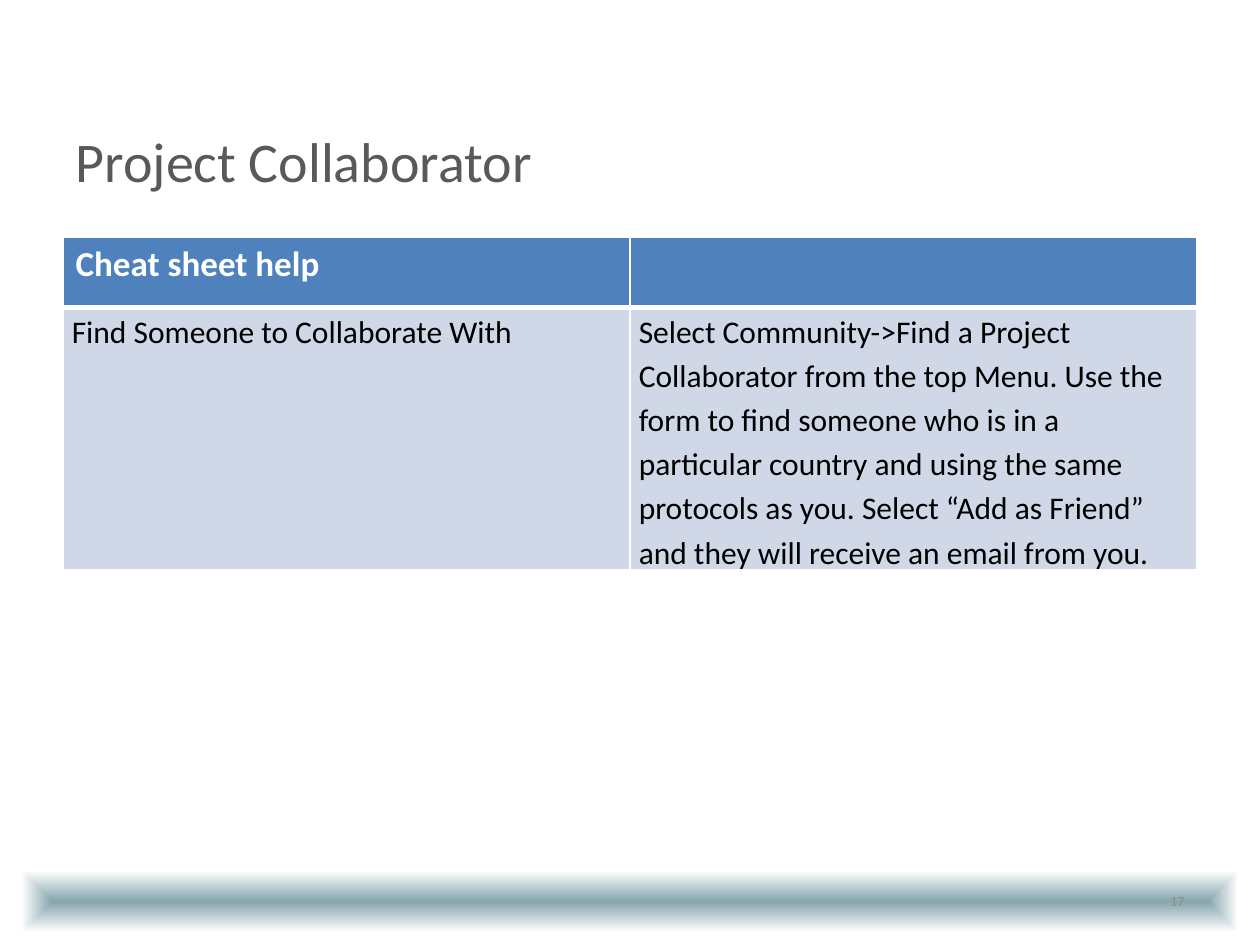
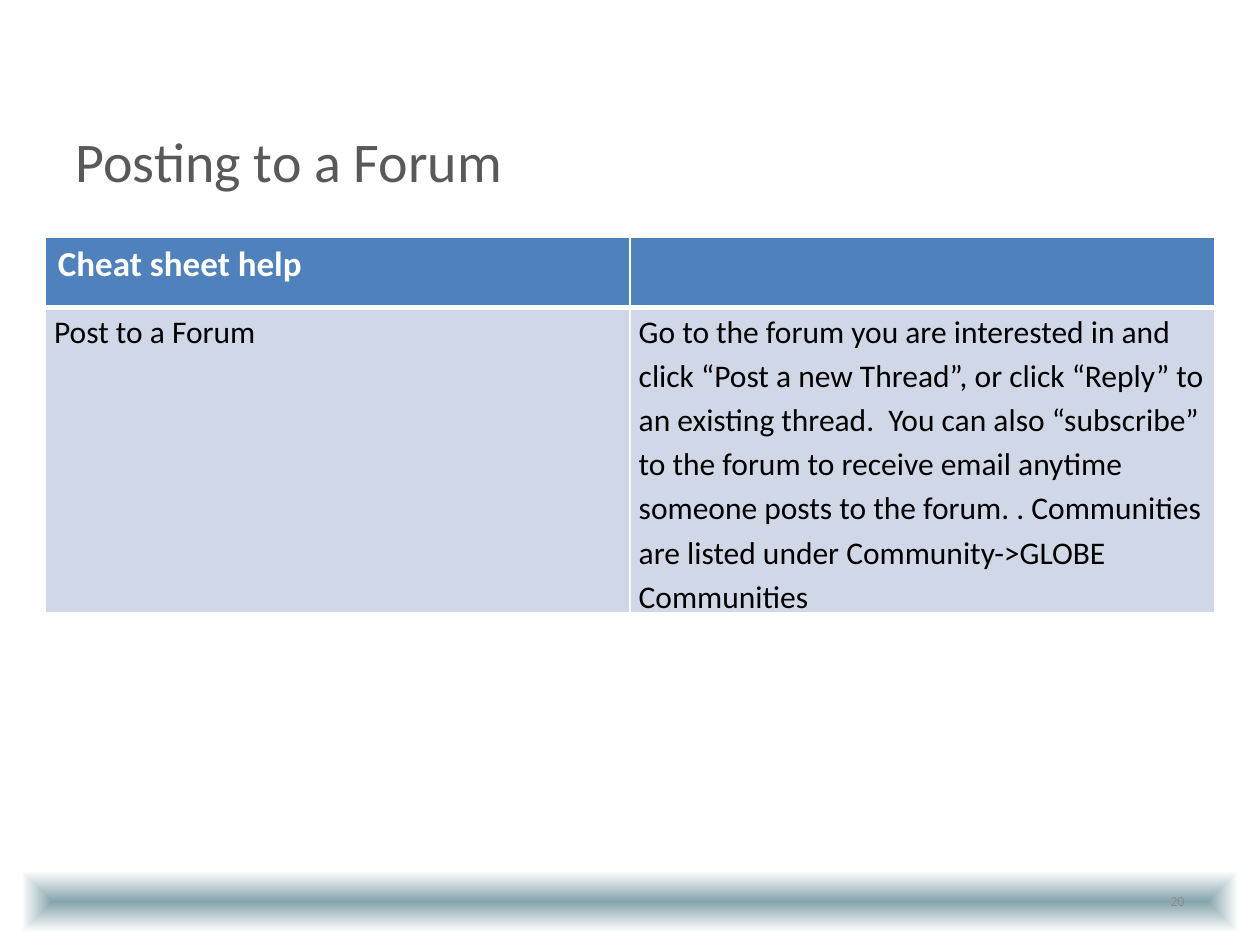
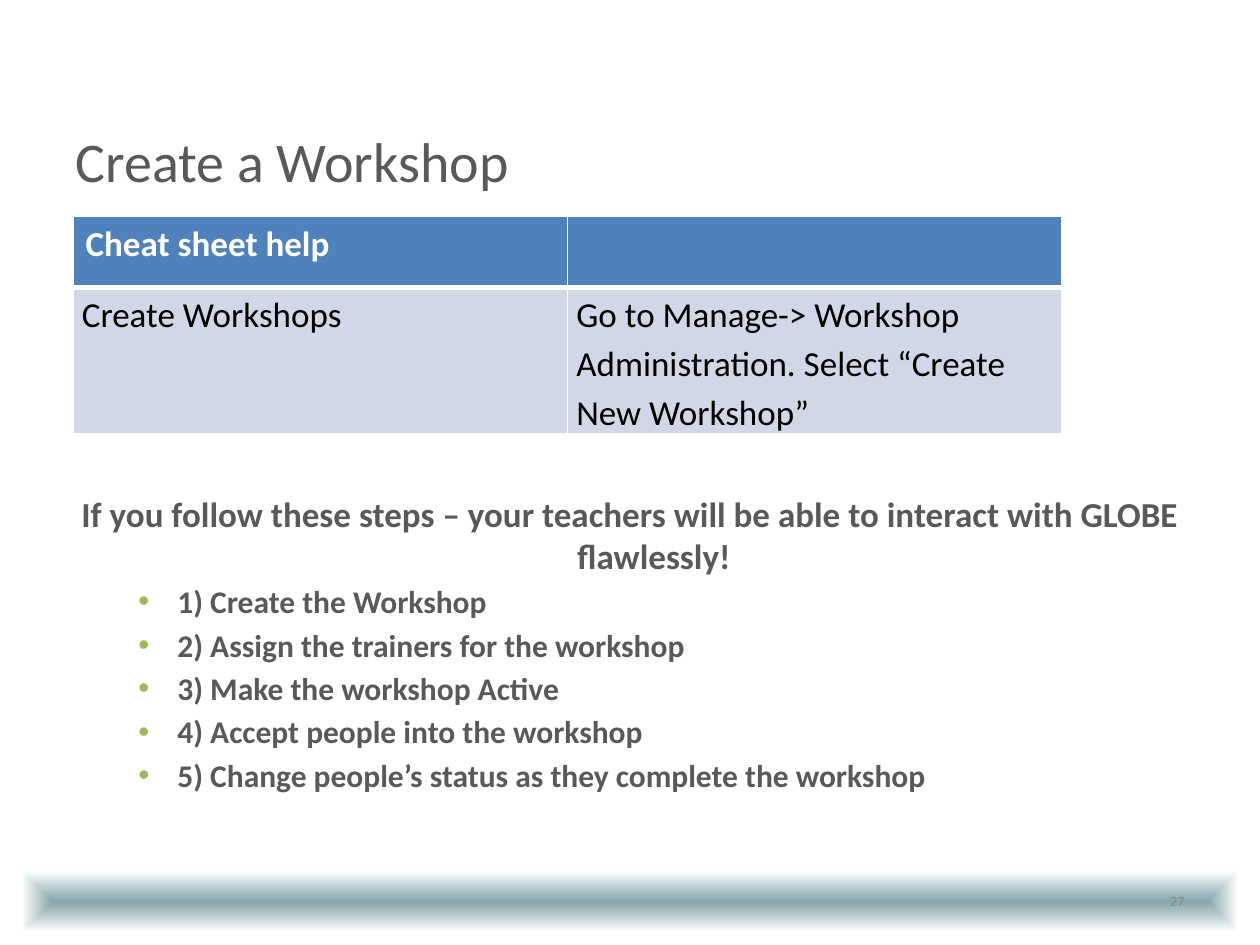
import pptx
import pptx.dml.color
import pptx.enum.shapes
import pptx.enum.text
import pptx.oxml
import pptx.oxml.ns
import pptx.util

Inches = pptx.util.Inches
Pt = pptx.util.Pt
Align = pptx.enum.text.PP_ALIGN
Anchor = pptx.enum.text.MSO_ANCHOR

# Shared look
FONT = "Calibri"
WHITE, BLACK = "FFFFFF", "000000"
TEXT_GRAY, NUMBER_GRAY = "595959", "8C8C8C"
HEADER_BLUE, CELL_BLUE = "4F81BD", "D0D8E8"
BULLET_GREEN, BAND_TEAL = "9BBB59", "86A5AD"
HEADER_HEIGHT = 0.56
NAMESPACE = pptx.oxml.ns.nsdecls("a")


def color(value):
    return pptx.dml.color.RGBColor.from_string(value)


def write(paragraph, text, size=18, fill=TEXT_GRAY, bold=False, align=Align.LEFT,
          line_spacing=None, space_before=0):
    paragraph.text = text
    paragraph.alignment = align
    paragraph.space_before = Pt(space_before)
    if line_spacing:
        paragraph.line_spacing = line_spacing
    font = paragraph.font
    font.name, font.size, font.bold = FONT, Pt(size), bold
    font.color.rgb = color(fill)


def add_text_frame(slide, left, top, width, height, anchor=Anchor.TOP):
    box = slide.shapes.add_textbox(Inches(left), Inches(top), Inches(width), Inches(height))
    box.text_frame.word_wrap = True
    box.text_frame.vertical_anchor = anchor
    return box.text_frame


def add_band(slide):
    band = slide.shapes.add_shape(pptx.enum.shapes.MSO_SHAPE.RECTANGLE,
                                  Inches(0.17), Inches(6.91), Inches(9.66), Inches(0.49))
    band.shadow.inherit = False
    band.line.fill.background()
    # Gradient running from the centre of the band to its edges
    gradient = pptx.oxml.parse_xml(
        f'<a:gradFill {NAMESPACE} rotWithShape="1"><a:gsLst>'
        f'<a:gs pos="0"><a:srgbClr val="{BAND_TEAL}"/></a:gs>'
        f'<a:gs pos="100000"><a:srgbClr val="{WHITE}"/></a:gs></a:gsLst>'
        '<a:path path="shape"><a:fillToRect l="50000" t="50000" r="50000" b="50000"/></a:path>'
        '</a:gradFill>')
    band.element.spPr.find(pptx.oxml.ns.qn("a:prstGeom")).addnext(gradient)


def start_slide(presentation, title_text, number):
    slide = presentation.slides.add_slide(presentation.slide_layouts[5])
    add_band(slide)
    title = slide.shapes.title
    title.left, title.top = Inches(0.5), Inches(0.79)
    title.width, title.height = Inches(9), Inches(0.96)
    title.text_frame.vertical_anchor = Anchor.MIDDLE
    write(title.text_frame.paragraphs[0], title_text, size=32)
    number_frame = add_text_frame(slide, 7.17, 6.95, 2.33, 0.4, Anchor.MIDDLE)
    write(number_frame.paragraphs[0], str(number), size=8, fill=NUMBER_GRAY, align=Align.RIGHT)
    return slide


def style_cell(cell, fill, bottom_width):
    properties = cell._tc.get_or_add_tcPr()
    for side in ("L", "R", "T", "B"):
        width = Pt(bottom_width if side == "B" else 1)
        properties.append(pptx.oxml.parse_xml(
            f'<a:ln{side} {NAMESPACE} w="{width}"><a:solidFill>'
            f'<a:srgbClr val="{WHITE}"/></a:solidFill></a:ln{side}>'))
    cell.fill.solid()
    cell.fill.fore_color.rgb = color(fill)


def add_help_table(slide, left, top, width, body_height, task, steps, size=18):
    table = slide.shapes.add_table(2, 2, Inches(left), Inches(top), Inches(width),
                                   Inches(HEADER_HEIGHT + body_height)).table
    table.rows[0].height = Inches(HEADER_HEIGHT)
    table.rows[1].height = Inches(body_height)
    write(table.cell(0, 0).text_frame.paragraphs[0], "Cheat sheet help",
          size=20, fill=WHITE, bold=True)
    for column, text in enumerate((task, steps)):
        style_cell(table.cell(0, column), HEADER_BLUE, 3)
        cell = table.cell(1, column)
        style_cell(cell, CELL_BLUE, 1)
        cell.margin_left = cell.margin_right = Inches(0.07)
        cell.margin_top = cell.margin_bottom = 0
        write(cell.text_frame.paragraphs[0], text, size=size, fill=BLACK, line_spacing=1.15)


def set_indent(paragraph, left, hanging, bullet=False):
    properties = paragraph._p.get_or_add_pPr()
    properties.set("marL", str(Inches(left)))
    properties.set("indent", str(-Inches(hanging)))
    if bullet:
        for xml in (f'<a:buClr {NAMESPACE}><a:srgbClr val="{BULLET_GREEN}"/></a:buClr>',
                    f'<a:buFont {NAMESPACE} typeface="Arial"/>',
                    f'<a:buChar {NAMESPACE} char="•"/>'):
            properties.append(pptx.oxml.parse_xml(xml))


def add_steps(slide, heading, steps):
    frame = add_text_frame(slide, 0.5, 3.86, 9, 2.67)
    set_indent(frame.paragraphs[0], 0.38, 0.38)
    write(frame.paragraphs[0], heading, size=20, bold=True, align=Align.CENTER)
    for number, step in enumerate(steps, start=1):
        paragraph = frame.add_paragraph()
        set_indent(paragraph, 0.81, 0.31, bullet=True)
        write(paragraph, f"{number}) {step}", bold=True, space_before=3.2)


def main():
    presentation = pptx.Presentation()
    presentation.slide_width, presentation.slide_height = Inches(10), Inches(7.5)

    # Finding a collaborator
    slide = start_slide(presentation, "Project Collaborator", 17)
    add_help_table(
        slide, 0.5, 1.88, 9, 2.08, "Find Someone to Collaborate With",
        "Select Community->Find a Project Collaborator from the top Menu. Use the form to find "
        "someone who is in a particular country and using the same protocols as you. Select "
        "“Add as Friend” and they will receive an email from you.")

    # Posting to a forum
    slide = start_slide(presentation, "Posting to a Forum", 20)
    add_help_table(
        slide, 0.36, 1.88, 9.28, 2.42, "Post to a Forum",
        "Go to the forum you are interested in and click “Post a new Thread”, or click “Reply” "
        "to an existing thread.  You can also “subscribe” to the forum to receive email anytime "
        "someone posts to the forum. . Communities are listed under Community->GLOBE Communities")

    # Creating a workshop
    slide = start_slide(presentation, "Create a Workshop", 27)
    add_steps(
        slide,
        "If you follow these steps – your teachers will be able to interact with GLOBE flawlessly!",
        ("Create the Workshop", "Assign the trainers for the workshop",
         "Make the workshop Active", "Accept people into the workshop",
         "Change people’s status as they complete the workshop"))
    add_help_table(
        slide, 0.58, 1.72, 7.85, 1.16, "Create Workshops",
        "Go to Manage-> Workshop Administration. Select “Create New Workshop”", size=20)

    presentation.save("out.pptx")


if __name__ == "__main__":
    main()
